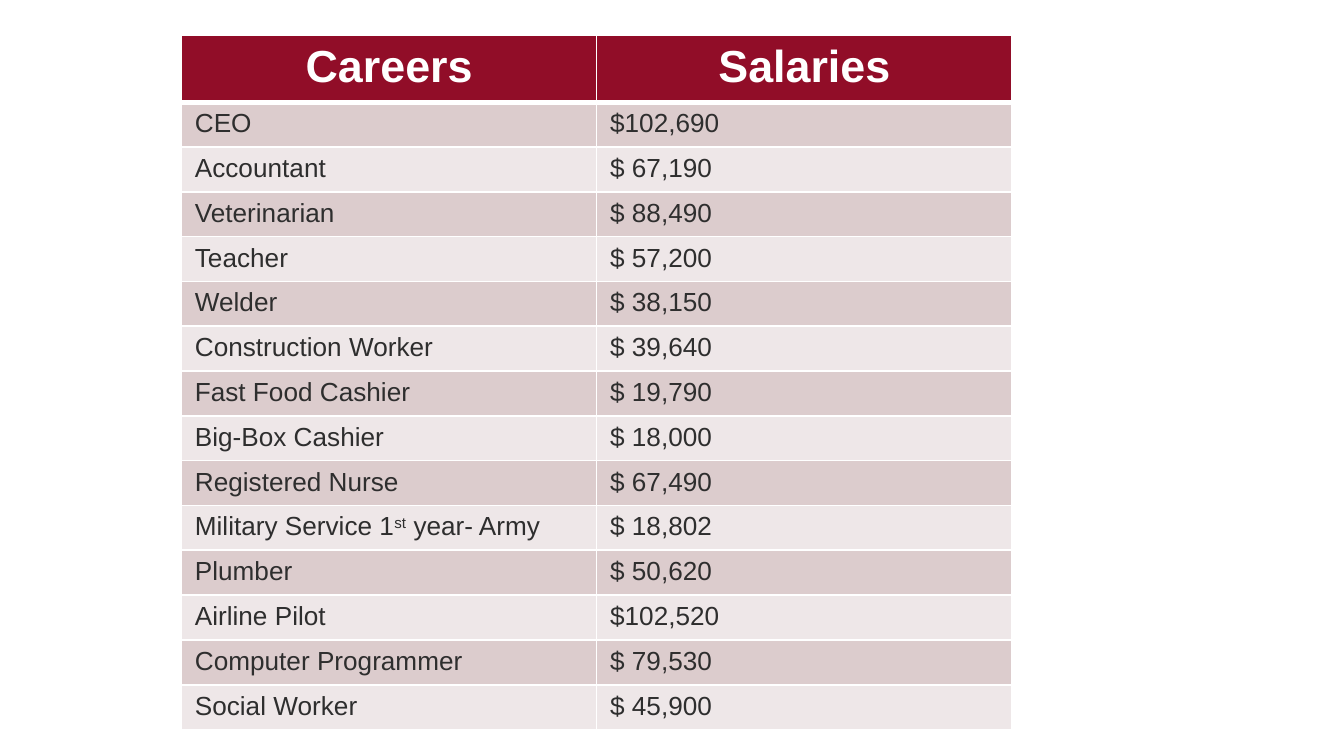
"""Build a slide with a table of careers and their salaries."""
from lxml.etree import SubElement
from pptx import Presentation
from pptx.dml.color import RGBColor
from pptx.enum.text import PP_ALIGN
from pptx.oxml.ns import qn
from pptx.util import Inches, Pt

BAND_FILLS = ["DCCCCD", "EEE7E8"]
BORDER_COLOR = "FFFFFF"
HEADER_FORMAT = {"name": "Arial", "size": Pt(24), "bold": True}
BODY_FORMAT = {"name": "Arial", "size": Pt(14), "bold": False}
TABLE_WIDTH = 6.18
TABLE_HEIGHT = 5.17
HEADER_HEIGHT = 0.5

CAREERS = [
    ("CEO", "$102,690"),
    ("Accountant", "$ 67,190"),
    ("Veterinarian", "$ 88,490"),
    ("Teacher", "$ 57,200"),
    ("Welder", "$ 38,150"),
    ("Construction Worker", "$ 39,640"),
    ("Fast Food Cashier", "$ 19,790"),
    ("Big-Box Cashier", "$ 18,000"),
    ("Registered Nurse", "$ 67,490"),
    ("Military Service 1^st^ year- Army", "$ 18,802"),
    ("Plumber", "$ 50,620"),
    ("Airline Pilot", "$102,520"),
    ("Computer Programmer", "$ 79,530"),
    ("Social Worker", "$ 45,900"),
]


def color(value):
    return RGBColor.from_string(value)


def add_borders(cell, widths):
    properties = cell._tc.get_or_add_tcPr()
    for side, width in widths.items():
        line = SubElement(properties, qn(f"a:ln{side}"), w=str(Pt(width)))
        fill = SubElement(line, qn("a:solidFill"))
        SubElement(fill, qn("a:srgbClr"), val=BORDER_COLOR)


presentation = Presentation()
presentation.slide_width = Inches(10)
presentation.slide_height = Inches(10 * 9 / 16)
slide = presentation.slides.add_slide(presentation.slide_layouts[6])

rows = [("Careers", "Salaries")] + CAREERS
table = slide.shapes.add_table(
    len(rows), 2, Inches(1.35), Inches(0.26), Inches(TABLE_WIDTH), Inches(TABLE_HEIGHT)
).table
for column in table.columns:
    column.width = Inches(TABLE_WIDTH / 2)
body_height = (TABLE_HEIGHT - HEADER_HEIGHT) / len(CAREERS)

for row_index, texts in enumerate(rows):
    is_header = row_index == 0
    table.rows[row_index].height = Inches(HEADER_HEIGHT if is_header else body_height)
    fill_color = "910D28" if is_header else BAND_FILLS[(row_index - 1) % 2]
    text_color = "FFFFFF" if is_header else "2E2E2E"
    text_format = HEADER_FORMAT if is_header else BODY_FORMAT
    top_width = 3 if row_index == 1 else 1
    bottom_width = 3 if is_header else 1

    for column_index, text in enumerate(texts):
        cell = table.cell(row_index, column_index)
        add_borders(cell, {"L": 1, "R": 1, "T": top_width, "B": bottom_width})
        cell.fill.solid()
        cell.fill.fore_color.rgb = color(fill_color)
        paragraph = cell.text_frame.paragraphs[0]
        paragraph.alignment = PP_ALIGN.CENTER if is_header else PP_ALIGN.LEFT
        for part_index, part in enumerate(text.split("^")):
            run = paragraph.add_run()
            run.text = part
            for name, value in text_format.items():
                setattr(run.font, name, value)
            run.font.color.rgb = color(text_color)
            if part_index == 1:
                run._r.get_or_add_rPr().set("baseline", "30000")

presentation.save("out.pptx")
